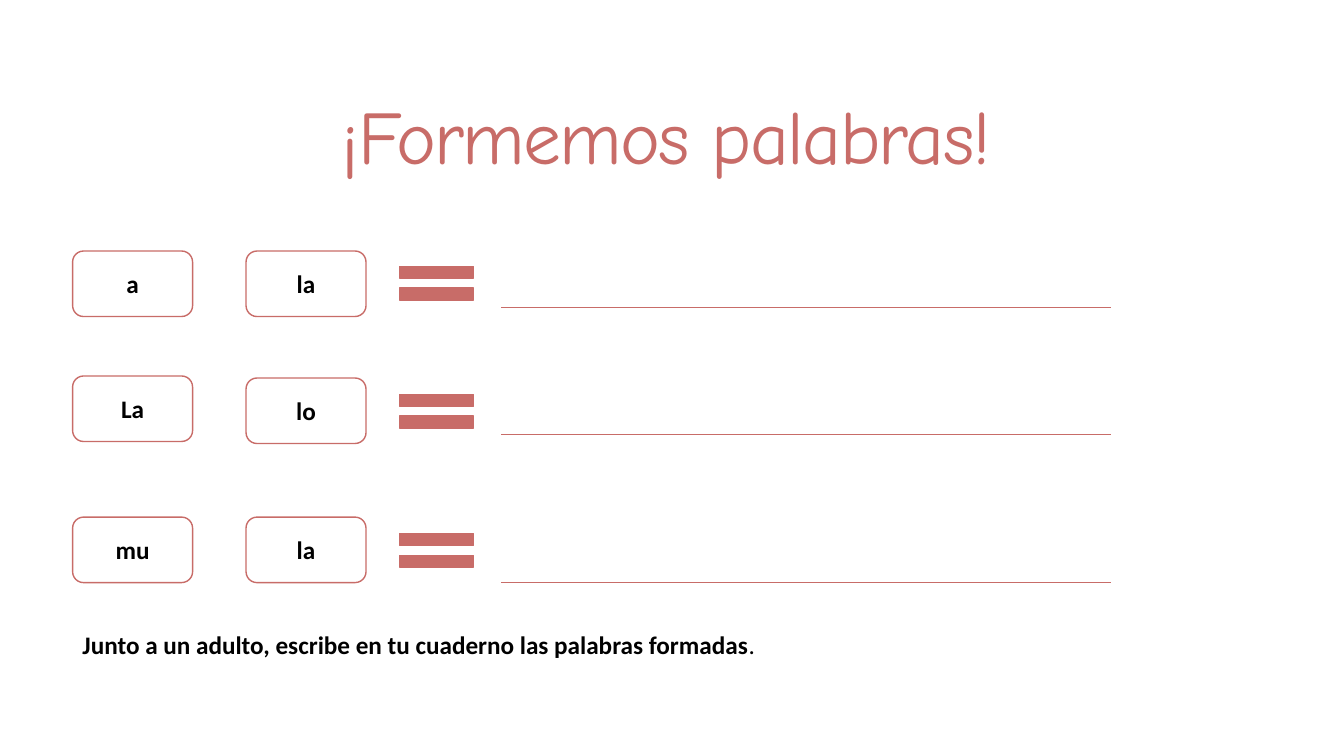
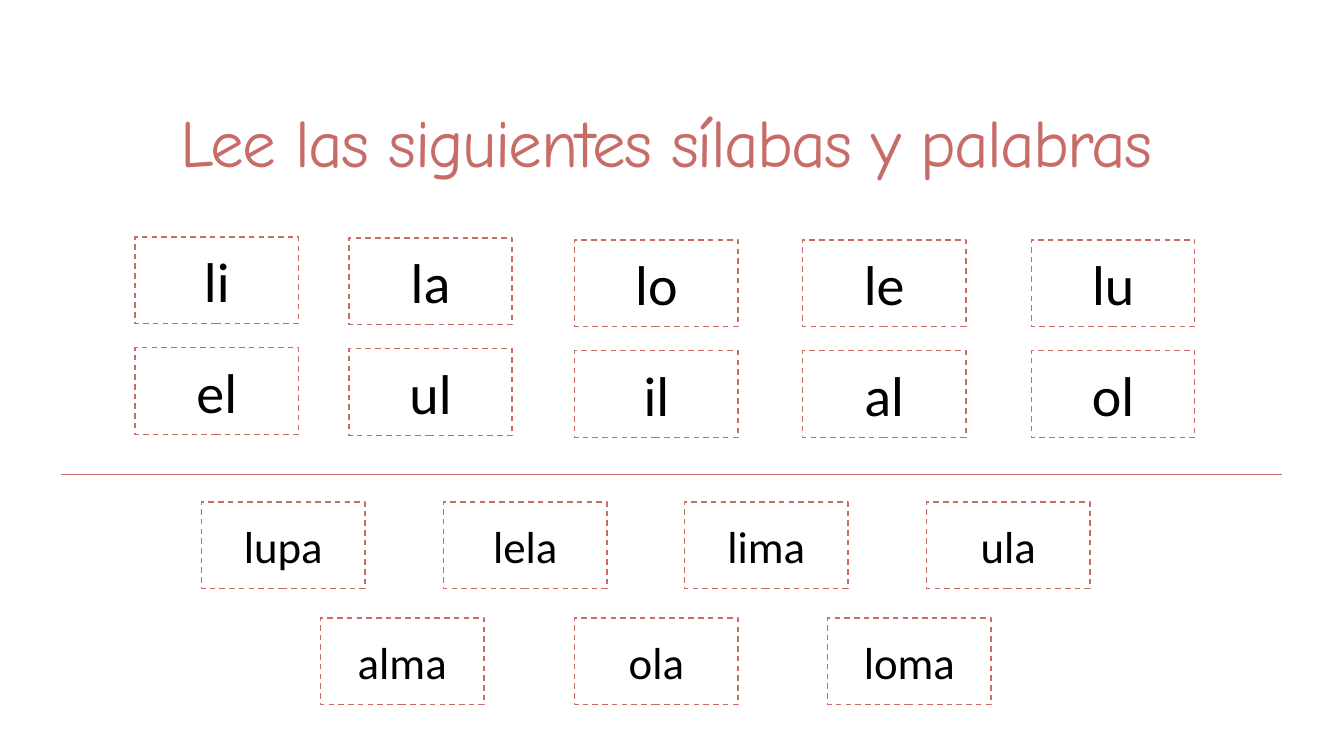
from dataclasses import dataclass

from lxml import etree
from pptx import Presentation
from pptx.dml.color import RGBColor
from pptx.enum.dml import MSO_LINE
from pptx.enum.shapes import MSO_CONNECTOR, MSO_SHAPE
from pptx.enum.text import MSO_ANCHOR, MSO_AUTO_SIZE, PP_ALIGN
from pptx.oxml.ns import qn
from pptx.util import Pt

# Shared look
CORAL = RGBColor(0xC8, 0x6C, 0x68)
BLACK = RGBColor(0x00, 0x00, 0x00)
TITLE_FONT, BODY_FONT = "Comic Neue", "Calibri"
EMU_PER_PX = 9144  # 100 px to the inch
TITLE_ONLY_LAYOUT = 5

CENTER, LEFT = PP_ALIGN.CENTER, PP_ALIGN.LEFT
MIDDLE = MSO_ANCHOR.MIDDLE
NO_AUTOFIT, GROW = MSO_AUTO_SIZE.NONE, MSO_AUTO_SIZE.SHAPE_TO_FIT_TEXT
ROUNDED, RECTANGLE, EQUAL = (
    MSO_SHAPE.ROUNDED_RECTANGLE, MSO_SHAPE.RECTANGLE, MSO_SHAPE.MATH_EQUAL)
STRAIGHT = MSO_CONNECTOR.STRAIGHT
DASH = MSO_LINE.DASH


@dataclass(frozen=True)
class Box:
    left: int
    top: int
    width: int
    height: int

    def emu(self) -> list[int]:
        return [px(v) for v in (self.left, self.top, self.width, self.height)]


@dataclass(frozen=True)
class WordRow:
    """Two syllables to join, with the tops of the parts in their row."""
    first: str
    second: str
    first_top: int
    second_top: int
    equal_top: int
    line_y: int


@dataclass(frozen=True)
class Card:
    text: str
    left: int
    top: int
    size: int


WORD_ROWS = [
    WordRow("a", "la", 249, 249, 256, 305),
    WordRow("La", "lo", 373, 375, 383, 431),
    WordRow("mu", "la", 513, 513, 521, 578),
]
SYLLABLE_COLUMNS = [  # left, top, syllables downwards
    (134, 235, ("li", "el")),
    (346, 236, ("la", "ul")),
    (570, 238, ("lo", "il")),
    (796, 238, ("le", "al")),
    (1023, 238, ("lu", "ol")),
]
SYLLABLE_PITCH = 110
READING_ROWS = [  # first left, last left, top, words
    (200, 919, 498, ("lupa", "lela", "lima", "ula")),
    (318, 821, 613, ("alma", "ola", "loma")),
]


def px(value: int) -> int:
    return value * EMU_PER_PX


def write_text(paragraph, text: str, *, size: int, font: str = BODY_FONT,
               color: RGBColor = BLACK, bold: bool = False, align=CENTER,
               line_spacing: float = 1.0, tracking: int = 0) -> None:
    """Add a run; tracking is in hundredths of a point."""
    paragraph.alignment = align
    paragraph.line_spacing = line_spacing
    run = paragraph.add_run()
    run.text = text
    run.font.size = Pt(size)
    run.font.name = font
    run.font.bold = bold
    run.font.color.rgb = color
    if tracking:
        run.font._element.set("spc", str(tracking))


def add_titled_slide(presentation, title: str, top: int, size: int):
    layout = presentation.slide_layouts[TITLE_ONLY_LAYOUT]
    slide = presentation.slides.add_slide(layout)
    shape = slide.shapes.title
    shape.left, shape.top, shape.width, shape.height = Box(72, top, 1178, 181).emu()
    frame = shape.text_frame
    frame.auto_size = NO_AUTOFIT
    frame.vertical_anchor = MIDDLE
    write_text(frame.paragraphs[0], title, size=size, font=TITLE_FONT,
               color=CORAL, line_spacing=0.85, tracking=-120)
    return slide


def add_outlined(slide, kind, box: Box):
    shape = slide.shapes.add_shape(kind, *box.emu())
    shape.shadow.inherit = False
    shape.fill.background()
    shape.line.color.rgb = CORAL
    shape.line.width = Pt(1)
    return shape


def add_label(slide, kind, box: Box, text: str, *, size: int, bold: bool = False):
    shape = add_outlined(slide, kind, box)
    shape.text_frame.vertical_anchor = MIDDLE
    write_text(shape.text_frame.paragraphs[0], text, size=size, bold=bold)
    return shape


def add_rule(slide, left: int, right: int, y: int) -> None:
    rule = slide.shapes.add_connector(STRAIGHT, px(left), px(y), px(right), px(y))
    rule.line.color.rgb = CORAL
    rule.line.width = Pt(0.75)
    etree.SubElement(rule._element.spPr, qn("a:effectLst"))


def add_word_row(slide, row: WordRow) -> None:
    for left, top, text in ((72, row.first_top, row.first),
                            (244, row.second_top, row.second)):
        add_label(slide, ROUNDED, Box(left, top, 119, 65), text, size=18, bold=True)
    equal = add_outlined(slide, EQUAL, Box(383, row.equal_top, 100, 50))
    equal.adjustments[0], equal.adjustments[1] = 0.235, 0.197
    equal.fill.solid()
    equal.fill.fore_color.rgb = CORAL
    add_rule(slide, 497, 1102, row.line_y)


def add_card(slide, card: Card) -> None:
    shape = add_label(slide, RECTANGLE, Box(card.left, card.top, 162, 86),
                      card.text, size=card.size)
    shape.line.dash_style = DASH


def build_forming_slide(presentation) -> None:
    slide = add_titled_slide(presentation, "¡Formemos palabras!", top=50, size=54)
    for row in WORD_ROWS:
        add_word_row(slide, row)
    # Instruction
    frame = slide.shapes.add_textbox(*Box(72, 619, 1020, 40).emu()).text_frame
    frame.word_wrap = True
    frame.auto_size = GROW
    paragraph = frame.paragraphs[0]
    write_text(paragraph,
               "Junto a un adulto, escribe en tu cuaderno las palabras formadas",
               size=18, bold=True, align=LEFT)
    write_text(paragraph, ".", size=18, align=LEFT)


def build_reading_slide(presentation) -> None:
    slide = add_titled_slide(presentation, "Lee las siguientes sílabas y palabras",
                             top=55, size=48)
    # Syllables
    for left, top, syllables in SYLLABLE_COLUMNS:
        for index, syllable in enumerate(syllables):
            add_card(slide, Card(syllable, left, top + index * SYLLABLE_PITCH, 40))
    add_rule(slide, 61, 1272, 471)
    # Words, evenly spread over each row
    for first, last, top, words in READING_ROWS:
        pitch = (last - first) / (len(words) - 1)
        for index, word in enumerate(words):
            add_card(slide, Card(word, round(first + index * pitch), top, 32))


def main() -> None:
    presentation = Presentation()
    presentation.slide_width, presentation.slide_height = px(1333), px(750)
    build_forming_slide(presentation)
    build_reading_slide(presentation)
    presentation.save("out.pptx")


if __name__ == "__main__":
    main()
